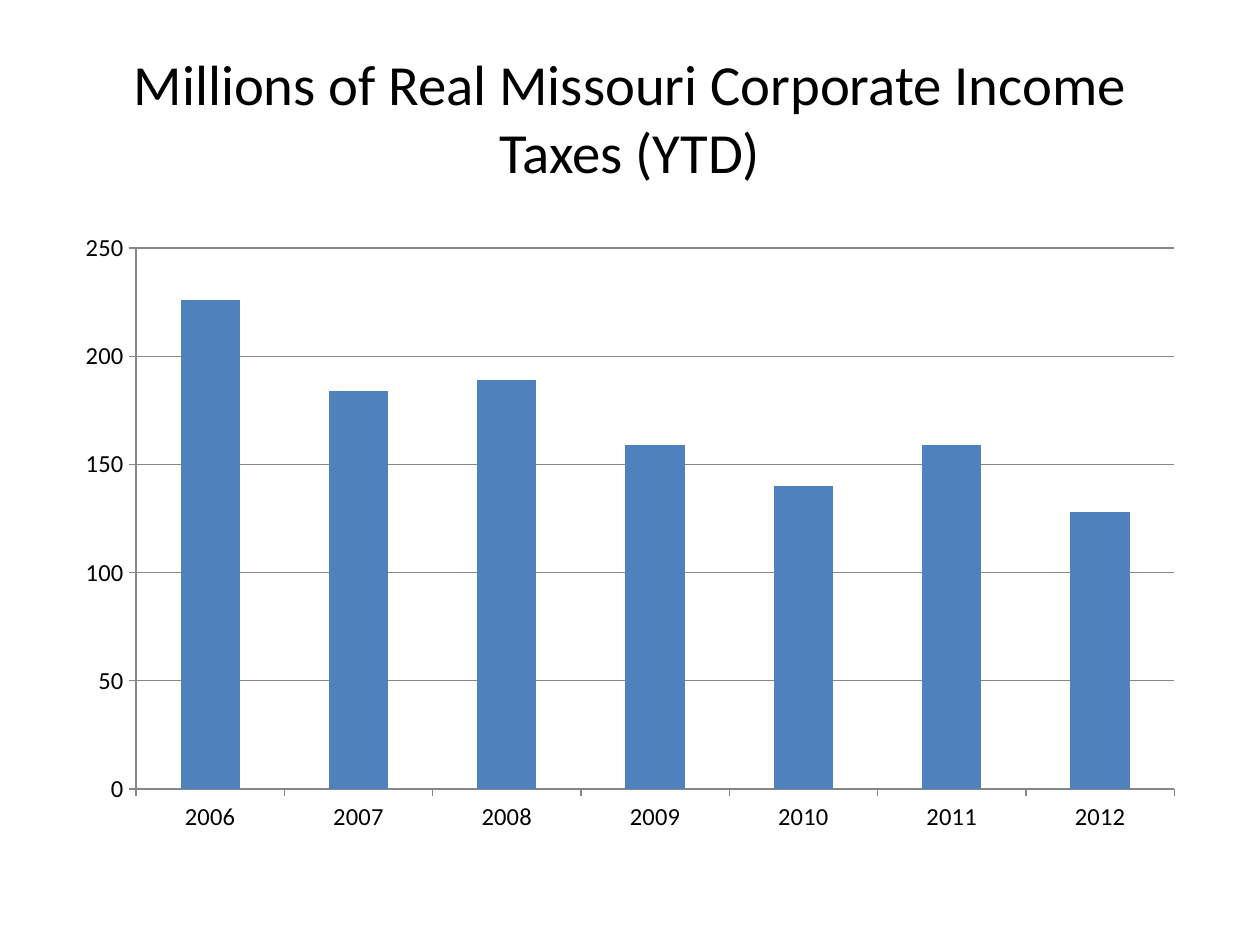
from pptx import Presentation
from pptx.chart import data
from pptx.dml import color
from pptx.enum import chart as chart_enum, text
from pptx.util import Pt

COLORS = {"text": "000000", "bar": "4F81BD", "line": "868686", "background": "FFFFFF"}
FONT = "Calibri"


def rgb(name):
    return color.RGBColor.from_string(COLORS[name])


def add_text(slide, content, left, top, width, height, size):
    shape = slide.shapes.add_textbox(Pt(left), Pt(top), Pt(width), Pt(height))
    frame = shape.text_frame
    frame.word_wrap = True
    frame.vertical_anchor = text.MSO_ANCHOR.MIDDLE
    paragraph = frame.paragraphs[0]
    paragraph.alignment = text.PP_ALIGN.CENTER
    run = paragraph.add_run()
    run.text = content
    run.font.name = FONT
    run.font.size = Pt(size)
    run.font.color.rgb = rgb("text")


presentation = Presentation()
presentation.slide_width = Pt(720)
presentation.slide_height = Pt(540)
slide = presentation.slides.add_slide(presentation.slide_layouts[6])
slide.background.fill.solid()
slide.background.fill.fore_color.rgb = rgb("background")

add_text(slide, "Millions of Real Missouri Corporate Income Taxes (YTD)",
         left=36, top=21.6, width=648, height=90, size=32.4)

taxes = data.CategoryChartData()
taxes.categories = [str(year) for year in range(2006, 2013)]
taxes.add_series("Series 1", [226, 184, 189, 159, 140, 159, 128])
chart = slide.shapes.add_chart(
    chart_enum.XL_CHART_TYPE.COLUMN_CLUSTERED,
    Pt(36), Pt(126), Pt(648), Pt(356.4), taxes).chart
chart.has_title = False
chart.has_legend = False
chart.font.name = FONT
chart.font.size = Pt(10)
chart.font.color.rgb = rgb("text")

plot = chart.plots[0]
plot.gap_width = 150
plot.vary_by_categories = False
bars = plot.series[0].format.fill
bars.solid()
bars.fore_color.rgb = rgb("bar")

for axis in (chart.category_axis, chart.value_axis):
    axis.major_tick_mark = chart_enum.XL_TICK_MARK.OUTSIDE
    axis.minor_tick_mark = chart_enum.XL_TICK_MARK.NONE
    axis.tick_labels.font.size = Pt(14)
    axis.tick_labels.font.name = FONT
    axis.tick_labels.font.color.rgb = rgb("text")
    axis.format.line.color.rgb = rgb("line")
    axis.format.line.width = Pt(0.75)

value_axis = chart.value_axis
value_axis.minimum_scale = 0
value_axis.maximum_scale = 250
value_axis.major_unit = 50
value_axis.has_major_gridlines = True
value_axis.major_gridlines.format.line.color.rgb = rgb("line")
value_axis.major_gridlines.format.line.width = Pt(0.75)

presentation.save("out.pptx")
